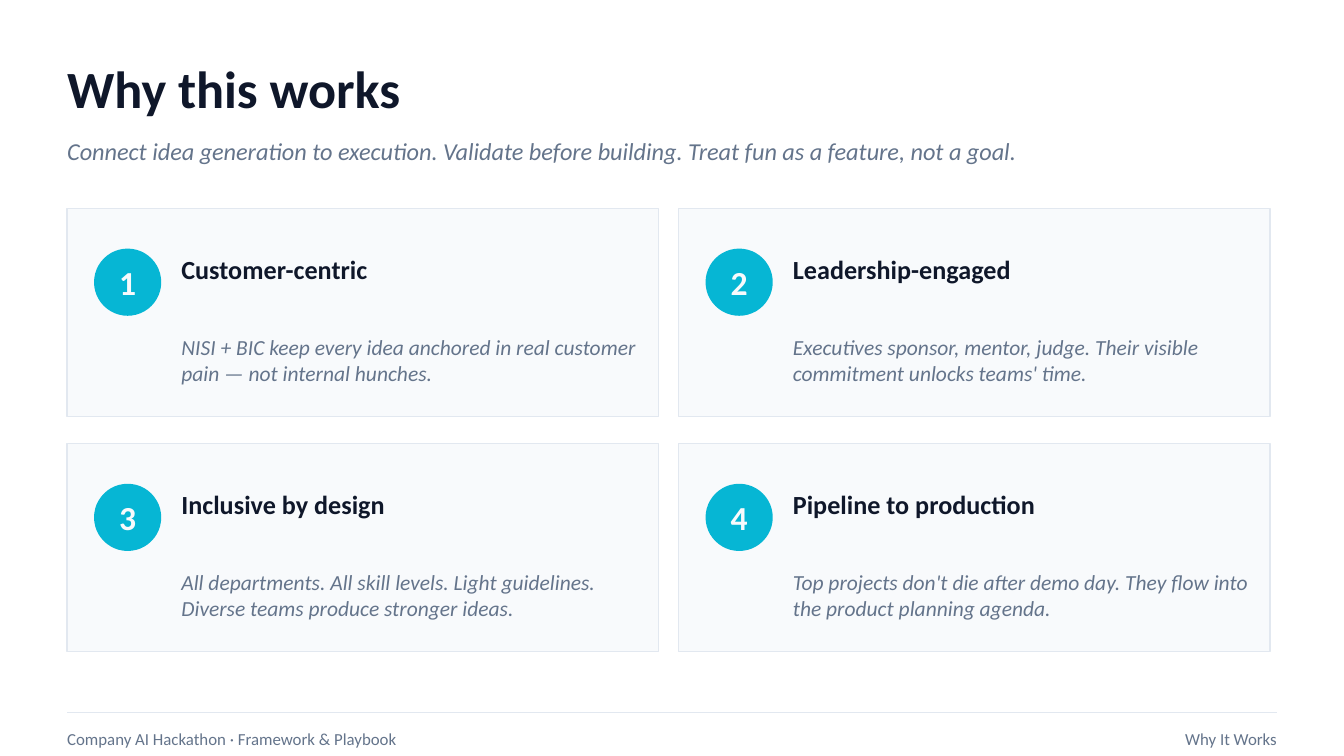
import pptx
import pptx.util
import pptx.dml.color
import pptx.enum.shapes
import pptx.enum.text
from lxml import etree

Pt = pptx.util.Pt
SHAPES = pptx.enum.shapes.MSO_SHAPE
ALIGN = pptx.enum.text.PP_ALIGN

TITLE = "Why this works"
SUBTITLE = ("Connect idea generation to execution. Validate before building. "
            "Treat fun as a feature, not a goal.")
REASONS = [
    ("Customer-centric",
     "NISI + BIC keep every idea anchored in real customer pain — not internal hunches."),
    ("Leadership-engaged",
     "Executives sponsor, mentor, judge. Their visible commitment unlocks teams' time."),
    ("Inclusive by design",
     "All departments. All skill levels. Light guidelines. Diverse teams produce stronger ideas."),
    ("Pipeline to production",
     "Top projects don't die after demo day. They flow into the product planning agenda."),
]
FOOTER_LEFT = "Company AI Hackathon · Framework & Playbook"
FOOTER_RIGHT = "Why It Works"

INK, MUTED, PALE, BORDER, ACCENT = "0F172A", "64748B", "F8FAFC", "E2E8F0", "06B6D4"
FORMATS = {
    "title": {"size": Pt(28), "bold": True, "color": INK},
    "subtitle": {"size": Pt(13), "italic": True, "color": MUTED},
    "number": {"size": Pt(18), "bold": True, "color": PALE},
    "heading": {"size": Pt(14), "bold": True, "color": INK},
    "detail": {"size": Pt(11.5), "italic": True, "color": MUTED},
    "footer": {"size": Pt(9), "color": MUTED},
}

MARGIN, CONTENT_W = 36, 648
CARD_W = CARD_H = 0
CARD_W, CARD_H, CARDS_TOP = 316.8, 111.6, 111.6
GAP_X, GAP_Y, COLUMNS = 10.8, 14.4, 2
BADGE = 36
TEXT_DX, TEXT_W = 61.2, 244.8
RULE_Y, FOOTER_Y, FOOTER_H, FOOTER_SPLIT = 381.6, 385.2, 21.6, 432


def rgb(code):
    return pptx.dml.color.RGBColor.from_string(code)


def write(shape, text, style, align=ALIGN.LEFT):
    frame = shape.text_frame
    frame_format = {
        "text": text, "word_wrap": True,
        "auto_size": pptx.enum.text.MSO_AUTO_SIZE.NONE,
        "vertical_anchor": pptx.enum.text.MSO_ANCHOR.MIDDLE,
        "margin_left": 0, "margin_top": 0, "margin_right": 0, "margin_bottom": 0,
    }
    for name, value in frame_format.items():
        setattr(frame, name, value)
    paragraph = frame.paragraphs[0]
    paragraph.alignment = align
    font = paragraph.runs[0].font
    font.name = "Calibri"
    for name, value in FORMATS[style].items():
        if name == "color":
            font.color.rgb = rgb(value)
        else:
            setattr(font, name, value)


def add_text(slide, box, text, style, align=ALIGN.LEFT):
    write(slide.shapes.add_textbox(*map(Pt, box)), text, style, align)


def add_filled(slide, kind, box, fill, line=None):
    shape = slide.shapes.add_shape(kind, *map(Pt, box))
    shape.shadow.inherit = False
    shape.fill.solid()
    shape.fill.fore_color.rgb = rgb(fill)
    if line:
        shape.line.color.rgb = rgb(line)
        shape.line.width = Pt(0.75)
    else:
        shape.line.fill.background()
    return shape


def add_card(slide, index, heading, detail):
    row, column = divmod(index, COLUMNS)
    x = MARGIN + column * (CARD_W + GAP_X)
    y = CARDS_TOP + row * (CARD_H + GAP_Y)
    add_filled(slide, SHAPES.RECTANGLE, (x, y, CARD_W, CARD_H), PALE, BORDER)
    badge = add_filled(slide, SHAPES.OVAL, (x + 14.4, y + 21.6, BADGE, BADGE), ACCENT)
    write(badge, str(index + 1), "number", ALIGN.CENTER)
    add_text(slide, (x + TEXT_DX, y + 14.4, TEXT_W, 36), heading, "heading")
    add_text(slide, (x + TEXT_DX, y + 54, TEXT_W, 54), detail, "detail")


def add_footer(slide):
    right = MARGIN + CONTENT_W
    rule = slide.shapes.add_connector(
        pptx.enum.shapes.MSO_CONNECTOR.STRAIGHT,
        Pt(MARGIN), Pt(RULE_Y), Pt(right), Pt(RULE_Y))
    rule.line.color.rgb = rgb(BORDER)
    rule.line.width = Pt(0.75)
    etree.SubElement(rule._element.spPr, pptx.oxml.ns.qn("a:effectLst"))
    add_text(slide, (MARGIN, FOOTER_Y, FOOTER_SPLIT - MARGIN, FOOTER_H),
             FOOTER_LEFT, "footer")
    add_text(slide, (FOOTER_SPLIT, FOOTER_Y, right - FOOTER_SPLIT, FOOTER_H),
             FOOTER_RIGHT, "footer", ALIGN.RIGHT)


def main():
    deck = pptx.Presentation()
    deck.slide_width, deck.slide_height = Pt(720), Pt(405)
    slide = deck.slides.add_slide(deck.slide_layouts.get_by_name("Title Only"))

    title = slide.shapes.title
    title_box = {"left": MARGIN, "top": 25.2, "width": CONTENT_W, "height": 43.2}
    for name, value in title_box.items():
        setattr(title, name, Pt(value))
    write(title, TITLE, "title")
    add_text(slide, (MARGIN, 68.4, CONTENT_W, 25.2), SUBTITLE, "subtitle")

    for index, (heading, detail) in enumerate(REASONS):
        add_card(slide, index, heading, detail)
    add_footer(slide)
    deck.save("out.pptx")


if __name__ == "__main__":
    main()
